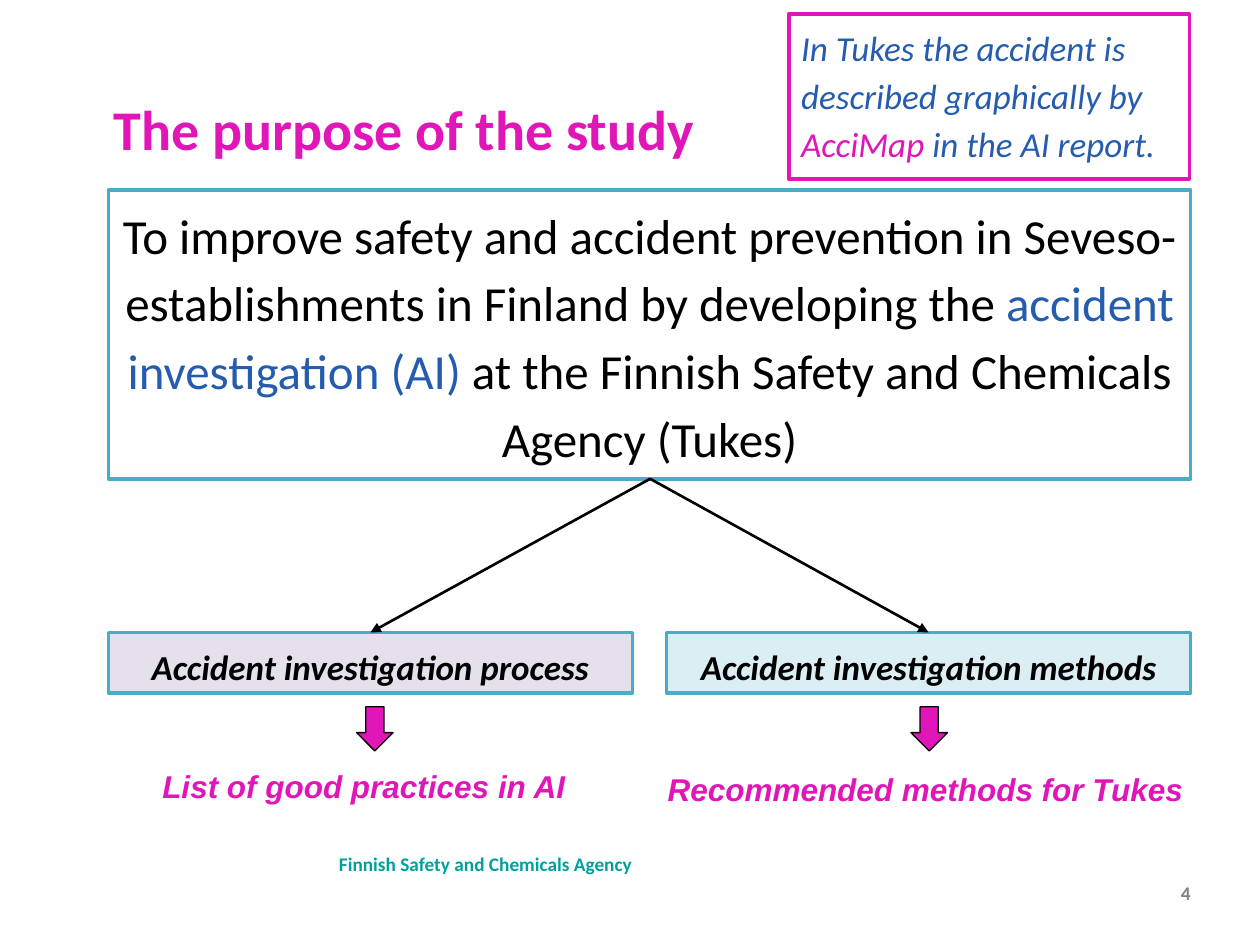
import pptx
import pptx.util
import pptx.dml.color
import pptx.enum.shapes
import pptx.enum.text
import pptx.oxml.ns
import lxml.etree

Inches = pptx.util.Inches
Pt = pptx.util.Pt
ALIGN = pptx.enum.text.PP_ALIGN
ANCHOR = pptx.enum.text.MSO_ANCHOR
SHAPE = pptx.enum.shapes.MSO_SHAPE

PINK, BLUE, TEAL = "E016B8", "255CAE", "4BACC6"
BLACK, WHITE = "000000", "FFFFFF"


def tint(text):
    return pptx.dml.color.RGBColor.from_string(text)


def style(run, size, color, name="Calibri", bold=False, slant=False):
    font = run.font
    font.size, font.name = Pt(size), name
    font.bold, font.italic = bold, slant
    font.color.rgb = tint(color)


def write(frame, parts, size, align=ALIGN.LEFT, anchor=ANCHOR.TOP,
          space=None, **look):
    frame.vertical_anchor = anchor
    para = frame.paragraphs[0]
    para.alignment = align
    if space:
        para.line_spacing = space
    for text, color in parts:
        run = para.add_run()
        run.text = text
        style(run, size, color, **look)


def block(slide, kind, box, fill, line, width):
    shape = slide.shapes.add_shape(kind, *map(Inches, box))
    shape.shadow.inherit = False
    shape.fill.solid()
    shape.fill.fore_color.rgb = tint(fill)
    shape.line.color.rgb = tint(line)
    shape.line.width = Pt(width)
    return shape


def panel(slide, box, fill, line, parts, size, align=ALIGN.CENTER, **look):
    shape = block(slide, SHAPE.RECTANGLE, box, fill, line, 2)
    shape.text_frame.word_wrap = True
    write(shape.text_frame, parts, size, align, space=1.15, **look)


def label(slide, box, text, size, color, inset=None, wrap=True, **look):
    frame = slide.shapes.add_textbox(*map(Inches, box)).text_frame
    frame.word_wrap = wrap
    if inset is not None:
        frame.margin_left = frame.margin_right = Inches(inset)
        frame.margin_top = frame.margin_bottom = Inches(inset)
    write(frame, [(text, color)], size, **look)


def arrow(slide, start, end):
    line = slide.shapes.add_connector(
        pptx.enum.shapes.MSO_CONNECTOR.STRAIGHT, *map(Inches, start + end))
    line.line.color.rgb = tint(BLACK)
    line.line.width = Pt(1.5)
    qn = pptx.oxml.ns.qn
    tail = lxml.etree.SubElement(line.line._get_or_add_ln(), qn("a:tailEnd"))
    tail.set("type", "triangle")
    lxml.etree.SubElement(line._element.spPr, qn("a:effectLst"))


def head(slide, box):
    title = slide.shapes.title
    title.left, title.top, title.width, title.height = map(Inches, box)
    title.text_frame.word_wrap = True
    write(title.text_frame, [("The purpose of the study", PINK)], 32,
          anchor=ANCHOR.MIDDLE, space=Pt(35), bold=True)


def note(slide, box):
    parts = [("In Tukes the accident is described graphically by ", BLUE),
             ("AcciMap", PINK), (" in the AI report.", BLUE)]
    panel(slide, box, WHITE, PINK, parts, 20, ALIGN.LEFT, slant=True)


def goal(slide, box):
    parts = [("To improve safety and accident prevention in "
              "Seveso-establishments in Finland by developing the ", BLACK),
             ("accident investigation (AI) ", BLUE),
             ("at the Finnish Safety and Chemicals Agency (Tukes)", BLACK)]
    panel(slide, box, WHITE, TEAL, parts, 28)


def branch(slide, box, root, fill, text, mark, result, spot):
    left, top, width, height = box
    panel(slide, box, fill, TEAL, [(text, BLACK)], 20, bold=True, slant=True)
    arrow(slide, root, (left + width / 2, top))
    block(slide, SHAPE.DOWN_ARROW, (mark, top + 0.59, 0.29, 0.35),
          PINK, BLACK, 0.75)
    label(slide, spot, result, 18, PINK, wrap=False,
          name="Arial", bold=True, slant=True)


def foot(slide, agency, number):
    look = {"inset": 0, "anchor": ANCHOR.MIDDLE, "bold": True}
    label(slide, agency, "Finnish Safety and Chemicals Agency", 11,
          "00A09C", **look)
    label(slide, number, "4", 11, "818183", align=ALIGN.RIGHT, **look)


def main():
    deck = pptx.Presentation()
    deck.slide_width, deck.slide_height = Inches(10), Inches(7.5)
    slide = deck.slides.add_slide(deck.slide_layouts[5])
    head(slide, (0.8, 0.51, 8.52, 1.06))
    goal(slide, (0.86, 1.51, 8.59, 2.29))
    root = (5.16, 3.8)
    branch(slide, (0.86, 5.02, 4.16, 0.48), root, "E6E0EC",
           "Accident investigation process", 2.83,
           "List of good practices in AI", (1.19, 6.04, 3.4, 0.4))
    branch(slide, (5.29, 5.02, 4.16, 0.48), root, "DBEEF4",
           "Accident investigation methods", 7.23,
           "Recommended methods for Tukes", (5.2, 6.06, 4.33, 0.4))
    note(slide, (6.26, 0.11, 3.18, 1.31))
    foot(slide, (2.69, 6.76, 4.35, 0.19), (9.12, 6.92, 0.33, 0.33))
    deck.save("out.pptx")


if __name__ == "__main__":
    main()
